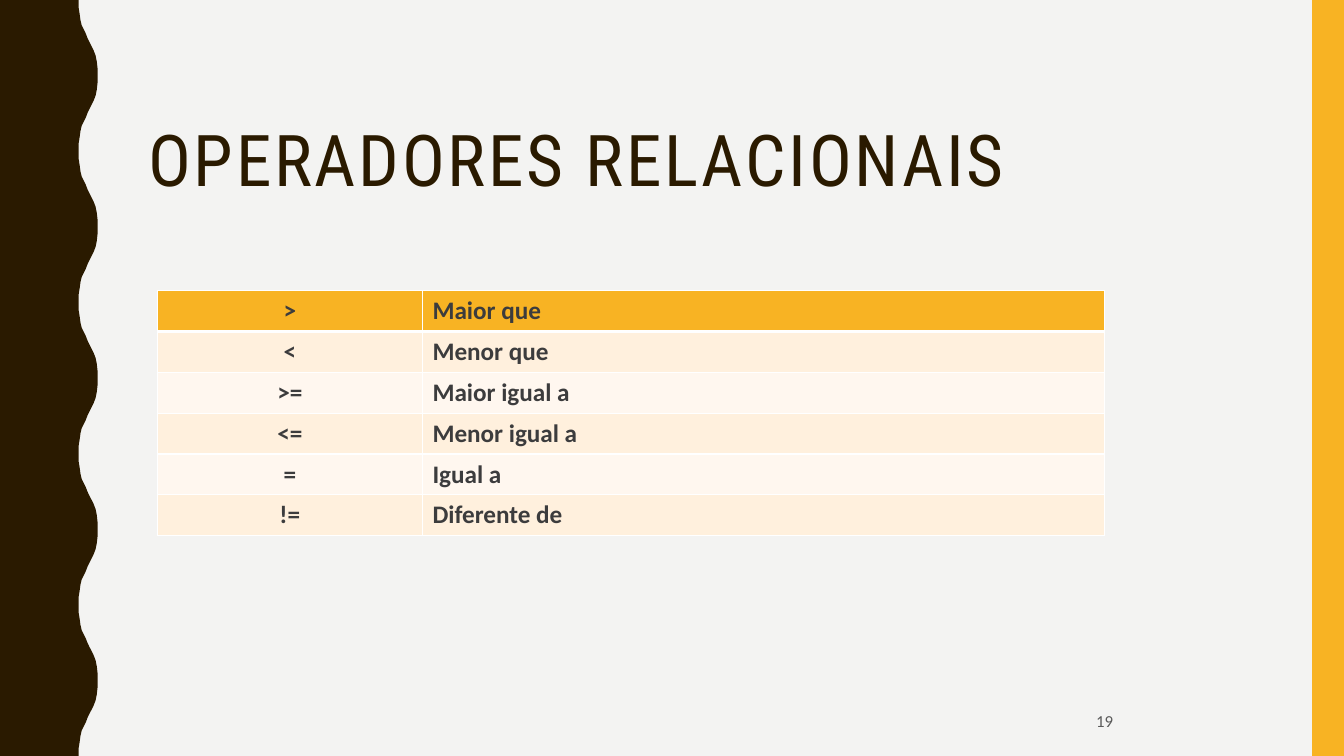
"""Build a slide with a table of relational operators."""
import lxml.etree
import pptx
import pptx.dml.color
import pptx.enum.shapes
import pptx.enum.text
import pptx.oxml.ns
import pptx.util

Cm = pptx.util.Cm
Pt = pptx.util.Pt
ALIGN = pptx.enum.text.PP_ALIGN
ANCHOR = pptx.enum.text.MSO_ANCHOR

DARK, GOLD, PAPER = "2A1A00", "F8B323", "F3F3F2"
BANDS = ("FFF0DD", "FFF7EF")
OPERATORS = (
    (">", "Maior que"),
    ("<", "Menor que"),
    (">=", "Maior igual a"),
    ("<=", "Menor igual a"),
    ("=", "Igual a"),
    ("!=", "Diferente de"),
)
HALF_WAVE = (
    (1.98, 0), (1.98, 0.18), (2.01, 0.36), (2.03, 0.51), (2.06, 0.64),
    (2.11, 0.74), (2.16, 0.84), (2.21, 0.97), (2.26, 1.07), (2.31, 1.17),
    (2.36, 1.27), (2.41, 1.4), (2.44, 1.55), (2.46, 1.73), (2.46, 1.91),
)
WAVE_COUNT = 5
TITLE_FORMAT = {"name": "Roboto Condensed", "size": Pt(51), "bold": False}
CELL_FORMAT = {"name": "Calibri", "size": Pt(18), "bold": True}
NUMBER_FORMAT = {"name": "Calibri", "size": Pt(12), "bold": False}


def paint(fill, color):
    """Make a fill solid in the given hex colour."""
    fill.solid()
    fill.fore_color.rgb = pptx.dml.color.RGBColor.from_string(color)


def set_attributes(target, values):
    """Set every attribute named in a dict."""
    for name, value in values.items():
        setattr(target, name, value)


def write(frame, text, values, color, align):
    """Write one formatted paragraph and return its run."""
    para = frame.paragraphs[0]
    para.alignment = align
    span = para.add_run()
    span.text = text
    set_attributes(span.font, values)
    paint(span.font.fill, color)
    return span


def finish(shape, color):
    """Give a shape a flat fill without line or shadow."""
    paint(shape.fill, color)
    shape.line.fill.background()
    shape.shadow.inherit = False


def draw_wave(page, left, top, height):
    """Draw the dark band whose right edge is a wave."""
    period = height / WAVE_COUNT
    mirrored = [(x, period - y) for x, y in HALF_WAVE[-2:0:-1]]
    edge = [(left + x, top + wave * period + y)
            for wave in range(WAVE_COUNT) for x, y in [*HALF_WAVE, *mirrored]]
    edge += [(left + HALF_WAVE[0][0], top + height), (left, top + height)]
    builder = page.shapes.build_freeform(Cm(left), Cm(top))
    builder.add_line_segments([(Cm(x), Cm(y)) for x, y in edge], close=True)
    finish(builder.convert_to_shape(), DARK)


def draw_bar(page, left, top, width, height):
    """Draw the gold bar."""
    bar = page.shapes.add_shape(pptx.enum.shapes.MSO_SHAPE.RECTANGLE,
                                Cm(left), Cm(top), Cm(width), Cm(height))
    finish(bar, GOLD)


def place_title(page, left, top, width, height):
    """Move and fill the title placeholder."""
    title = page.shapes.title
    set_attributes(title, {"left": Cm(left), "top": Cm(top),
                           "width": Cm(width), "height": Cm(height)})
    frame = title.text_frame
    set_attributes(frame, {"vertical_anchor": ANCHOR.BOTTOM, "word_wrap": True,
                           "auto_size": pptx.enum.text.MSO_AUTO_SIZE.NONE})
    span = write(frame, "OPERADORES RELACIONAIS", TITLE_FORMAT, DARK, ALIGN.LEFT)
    span.font._element.set("spc", "200")
    frame.paragraphs[0].line_spacing = 0.9


def place_number(page, left, top, width, height):
    """Write the page number."""
    box = page.shapes.add_textbox(Cm(left), Cm(top), Cm(width), Cm(height))
    frame = box.text_frame
    set_attributes(frame, {"vertical_anchor": ANCHOR.MIDDLE, "word_wrap": True,
                           "margin_left": Cm(0.13), "margin_right": Cm(0.13)})
    write(frame, "19", NUMBER_FORMAT, "595959", ALIGN.CENTER)
    frame.paragraphs[0].line_spacing = 0.9


def set_borders(cell, widths):
    """Give a cell white borders with widths in points by side."""
    qn = pptx.oxml.ns.qn
    properties = cell._tc.get_or_add_tcPr()
    for side, width in widths.items():
        line = lxml.etree.SubElement(properties, qn(f"a:ln{side}"), w=str(Pt(width)))
        solid = lxml.etree.SubElement(line, qn("a:solidFill"))
        lxml.etree.SubElement(solid, qn("a:srgbClr"), val="FFFFFF")


def place_table(page, left, top, width, height):
    """Place the table of operators and their meanings."""
    table = page.shapes.add_table(len(OPERATORS), 2, Cm(left), Cm(top),
                                  Cm(width), Cm(height)).table
    for column, share in zip(table.columns, (0.28, 0.72)):
        column.width = Cm(width * share)
    for index, texts in enumerate(OPERATORS):
        color = BANDS[(index - 1) % 2] if index else GOLD
        widths = {"L": 1, "R": 1, "T": 3 if index == 1 else 1,
                  "B": 1 if index else 3}
        for column, text in enumerate(texts):
            cell = table.cell(index, column)
            set_borders(cell, widths)
            paint(cell.fill, color)
            write(cell.text_frame, text, CELL_FORMAT, "3C3C3D",
                  ALIGN.LEFT if column else ALIGN.CENTER)


def build_page(deck):
    """Build the operators page."""
    page = deck.slides.add_slide(deck.slide_layouts[5])
    paint(page.background.fill, PAPER)
    draw_wave(page, 0, 0, 19.05)
    draw_bar(page, 33.07, 0, 0.8, 19.05)
    place_title(page, 3.48, 1.07, 28.27, 4.14)
    place_number(page, 23.93, 17.7, 7.82, 0.97)
    place_table(page, 3.96, 7.32, 23.88, 6.18)


def main():
    """Create and save the deck."""
    deck = pptx.Presentation()
    set_attributes(deck, {"slide_width": Cm(33.87), "slide_height": Cm(19.05)})
    build_page(deck)
    deck.save("out.pptx")


if __name__ == "__main__":
    main()
